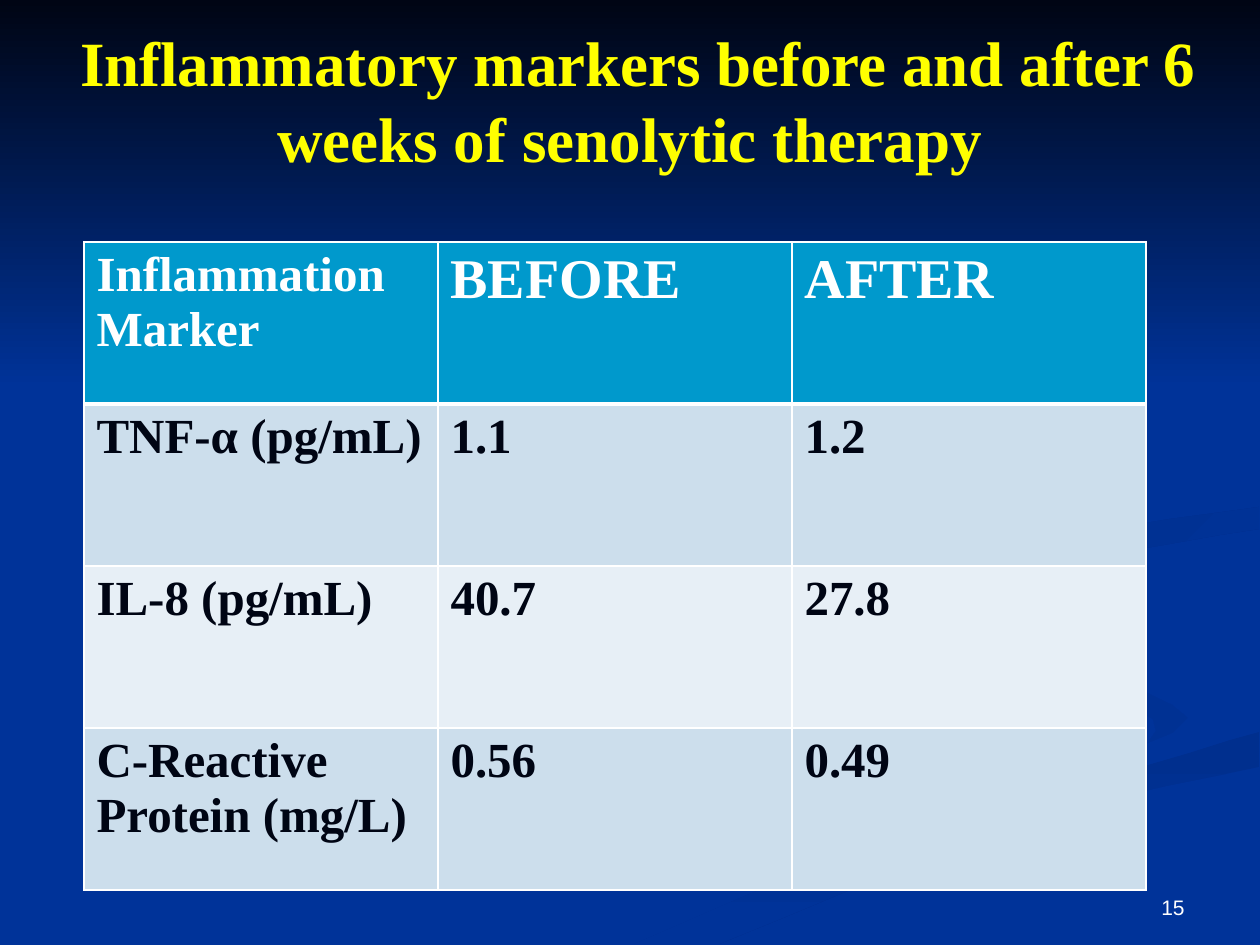
from dataclasses import dataclass

from lxml import etree
from pptx import Presentation
from pptx.dml.color import RGBColor
from pptx.enum.text import MSO_ANCHOR, MSO_AUTO_SIZE, PP_ALIGN
from pptx.oxml.ns import qn
from pptx.util import Pt

EMU_PER_PX = 914400 / 126
SLIDE_W, SLIDE_H = 1260, 945
TITLE_ONLY = 5
CURVE_STEPS = 4
MIDDLE, BOTTOM = MSO_ANCHOR.MIDDLE, MSO_ANCHOR.BOTTOM
CENTER, RIGHT = PP_ALIGN.CENTER, PP_ALIGN.RIGHT
NO_AUTOFIT = MSO_AUTO_SIZE.NONE


@dataclass(frozen=True)
class Theme:
    serif: str = "Times New Roman"
    sans: str = "Arial"
    background: str = "003399"
    shade: str = "002F8E"
    soft_shade: str = "003193"
    night: str = "000514"
    white: str = "FFFFFF"
    title: str = "FFFF00"
    header: str = "0099CC"
    bands: tuple = ("CCDEEC", "E7EFF6")
    title_size: int = 36
    heading_size: int = 32
    cell_size: int = 28
    number_size: int = 12
    thin: int = 1
    thick: int = 3


THEME = Theme()

MARKERS = [
    ("Inflammation Marker", "BEFORE", "AFTER"),
    ("TNF-α (pg/mL)", "1.1", "1.2"),
    ("IL-8 (pg/mL)", "40.7", "27.8"),
    ("C-Reactive Protein (mg/L)", "0.56", "0.49"),
]

# Edges shared by neighbouring ribbons
LOWER_EDGE = [(634, 944), (877, 843), (1092, 781), (1259, 732)]
UPPER_EDGE = [(985, 587), (1071, 538), (1259, 507)]

# Each ribbon: start colour, end colour, clockwise gradient angle, smooth edges
RIBBONS = [
    (THEME.background, THEME.soft_shade, 0, [
        [(724, 578), (795, 636), (990, 713), (679, 818), (378, 944)],
        [(455, 944), (711, 838), (1008, 732), (859, 654), (724, 578)]]),
    (THEME.background, THEME.soft_shade, 45, [
        [(912, 585), (1071, 660), (1188, 718), (1126, 762)],
        [(1126, 762), (1153, 719), (1027, 668), (912, 585)]]),
    (THEME.shade, THEME.background, 90, [
        LOWER_EDGE, [(1259, 767), (1034, 820), (719, 944)]]),
    (THEME.background, THEME.background, 0, [
        [(914, 585), (1072, 660), (1188, 718), (1023, 788), (601, 944)],
        LOWER_EDGE, [(1259, 678), (1068, 634), *UPPER_EDGE],
        [(1259, 488), (993, 532), (914, 585)]]),
    (THEME.shade, THEME.background, 45, [
        UPPER_EDGE, [(1259, 529), (1062, 564), (1014, 595), (1041, 625)]]),
    (THEME.shade, THEME.background, 45, [
        [(960, 294), (1104, 386), (1061, 476), (788, 537), (727, 582), (784, 630)],
        [(784, 630), (764, 570), (1040, 507), (1126, 433), (960, 294)]]),
]


def px(length):
    return round(length * EMU_PER_PX)


def rgb(code):
    return RGBColor.from_string(code)


def apply(target, values):
    for name, value in values.items():
        setattr(target, name, value)


def write(frame, text, size, color, font=THEME.serif, bold=True, align=None):
    paragraph = frame.paragraphs[0]
    paragraph.alignment = align
    run = paragraph.add_run()
    run.text = text
    apply(run.font, {"name": font, "size": Pt(size), "bold": bold})
    run.font.color.rgb = rgb(color)


def smooth_edge(knots):
    """Return points of a Catmull-Rom curve through the knots."""
    padded = [knots[0], *knots, knots[-1]]
    points = [knots[0]]
    for before, start, end, after in zip(padded, padded[1:], padded[2:], padded[3:]):
        for step in range(1, CURVE_STEPS + 1):
            t = step / CURVE_STEPS
            points.append(tuple(
                round(b + t * (c - a + t * (2 * a - 5 * b + 4 * c - d
                                            + t * (3 * b - a - 3 * c + d))) / 2)
                for a, b, c, d in zip(before, start, end, after)))
    return points


def shade(shape, start, end, angle):
    shape.shadow.inherit = False
    shape.line.fill.background()
    shape.fill.gradient()
    shape.fill.gradient_angle = -angle % 360
    for stop, color in zip(shape.fill.gradient_stops, (start, end)):
        stop.color.rgb = rgb(color)


def add_outline(slide, points):
    builder = slide.shapes.build_freeform(*points[0], scale=EMU_PER_PX)
    builder.add_line_segments(points[1:], close=True)
    return builder.convert_to_shape()


def add_backdrop(slide):
    slide.background.fill.solid()
    slide.background.fill.fore_color.rgb = rgb(THEME.background)
    for start, end, angle, edges in RIBBONS:
        points = [point for edge in edges for point in smooth_edge(edge)]
        shade(add_outline(slide, points), start, end, angle)
    sky = add_outline(slide, [(0, 0), (0, 388), (SLIDE_W, 388), (SLIDE_W, 0)])
    shade(sky, THEME.night, THEME.background, 90)


def place_title(slide, text):
    """Fill the title placeholder and lift it above the backdrop."""
    title = slide.shapes.title
    slide.shapes._spTree.append(title._element)
    apply(title, {"left": 0, "top": 0, "width": px(SLIDE_W), "height": px(199)})
    apply(title.text_frame, {"word_wrap": True, "auto_size": NO_AUTOFIT,
                             "vertical_anchor": MIDDLE})
    write(title.text_frame, text, THEME.title_size, THEME.title, align=CENTER)


def add_page_number(slide, number):
    box = slide.shapes.add_textbox(px(903), px(861), px(294), px(65))
    apply(box.text_frame, {"word_wrap": True, "vertical_anchor": BOTTOM})
    write(box.text_frame, number, THEME.number_size, THEME.white,
          font=THEME.sans, bold=False, align=RIGHT)


def set_borders(cell, widths):
    properties = cell._tc.get_or_add_tcPr()
    for side, width in widths.items():
        line = etree.SubElement(properties, qn(f"a:ln{side}"), w=str(Pt(width)))
        fill = etree.SubElement(line, qn("a:solidFill"))
        etree.SubElement(fill, qn("a:srgbClr"), val=THEME.white)


def add_marker_table(slide, rows, left, top, col_width, row_height):
    cols = len(rows[0])
    table = slide.shapes.add_table(
        len(rows), cols, px(left), px(top),
        px(col_width * cols), px(row_height * len(rows))).table
    for column in table.columns:
        column.width = px(col_width)
    for r, values in enumerate(rows):
        table.rows[r].height = px(row_height)
        for c, value in enumerate(values):
            cell = table.cell(r, c)
            heading = r == 0
            set_borders(cell, {"L": THEME.thin, "R": THEME.thin,
                               "T": THEME.thick if r == 1 else THEME.thin,
                               "B": THEME.thick if heading else THEME.thin})
            cell.fill.solid()
            cell.fill.fore_color.rgb = rgb(
                THEME.header if heading else THEME.bands[(r - 1) % 2])
            write(cell.text_frame, value,
                  THEME.heading_size if heading and c else THEME.cell_size,
                  THEME.white if heading else THEME.night)


def main():
    deck = Presentation()
    apply(deck, {"slide_width": px(SLIDE_W), "slide_height": px(SLIDE_H)})
    slide = deck.slides.add_slide(deck.slide_layouts[TITLE_ONLY])
    add_backdrop(slide)
    add_page_number(slide, "15")
    place_title(slide, " Inflammatory markers before and after 6 weeks of senolytic therapy")
    add_marker_table(slide, MARKERS, left=84, top=242, col_width=354, row_height=162)
    deck.save("out.pptx")


if __name__ == "__main__":
    main()
